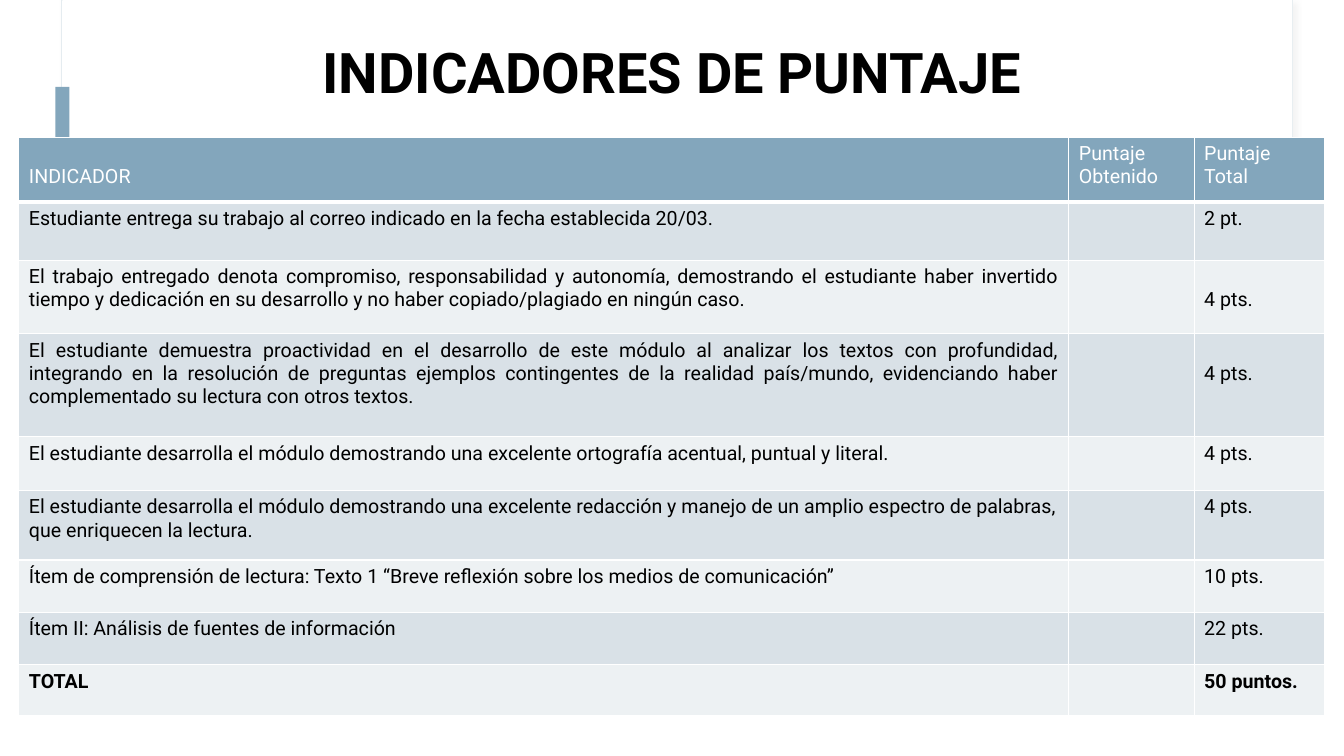
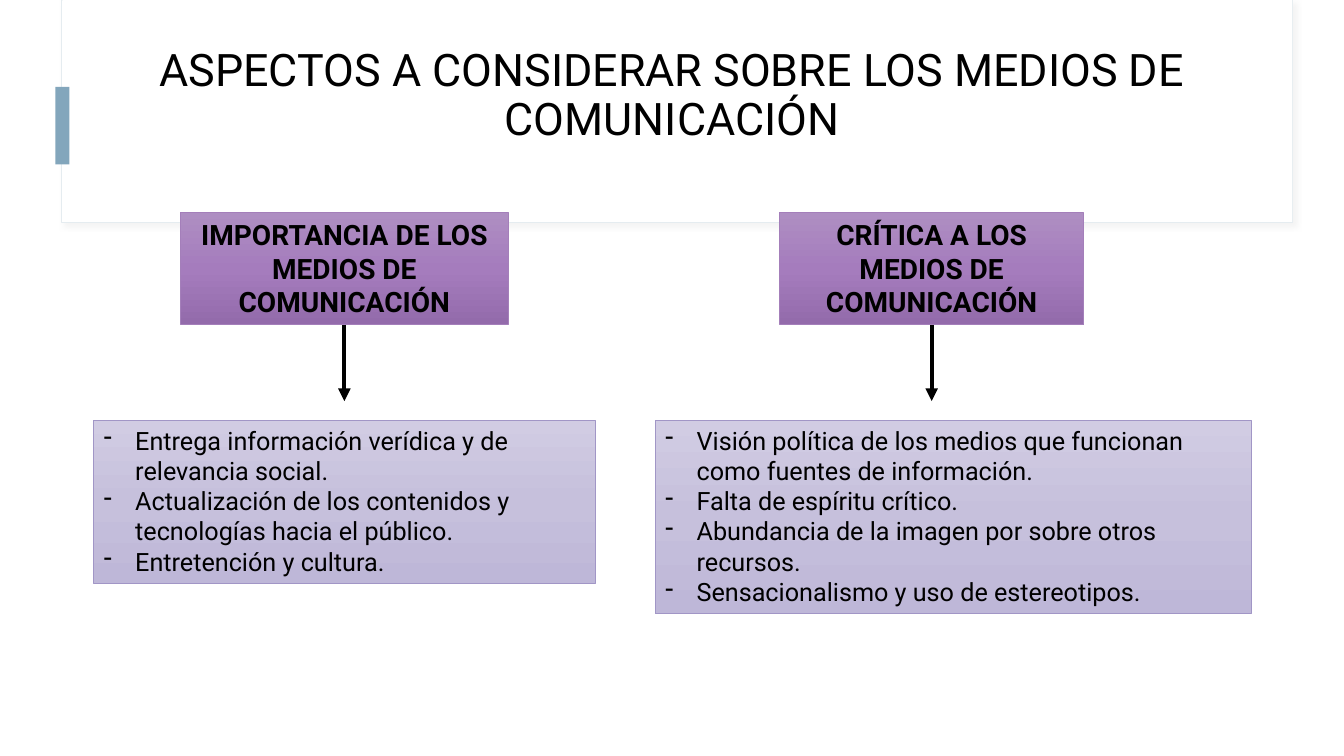
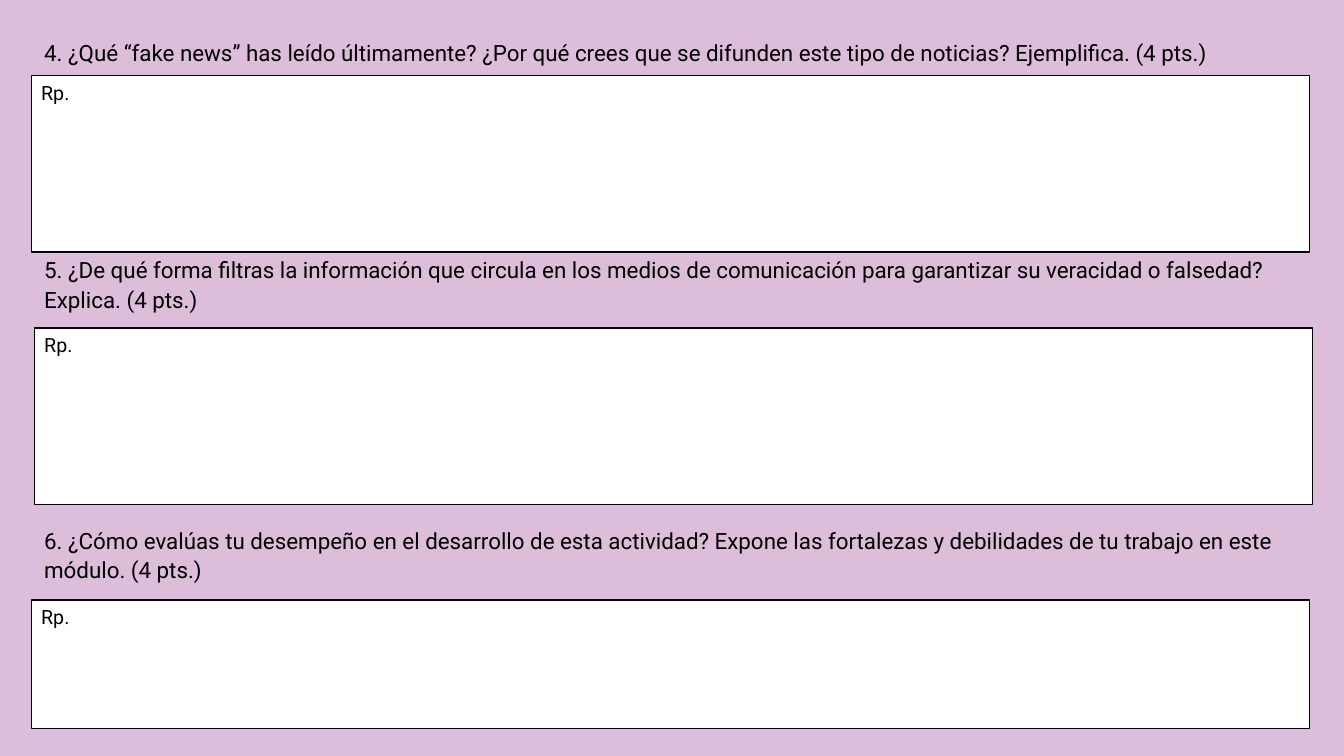
from copy import deepcopy
from dataclasses import dataclass

from lxml import etree
from pptx import Presentation
from pptx.dml.color import RGBColor
from pptx.enum.shapes import MSO_CONNECTOR, MSO_SHAPE
from pptx.enum.text import MSO_ANCHOR, PP_ALIGN
from pptx.oxml.ns import qn
from pptx.util import Pt

RECT = MSO_SHAPE.RECTANGLE
STRAIGHT = MSO_CONNECTOR.STRAIGHT
TOP, MIDDLE, BOTTOM = MSO_ANCHOR.TOP, MSO_ANCHOR.MIDDLE, MSO_ANCHOR.BOTTOM
LEFT, CENTER, JUSTIFY = PP_ALIGN.LEFT, PP_ALIGN.CENTER, PP_ALIGN.JUSTIFY


@dataclass(frozen=True)
class Theme:
    font: str = "Roboto"
    black: str = "000000"
    white: str = "FFFFFF"
    blue: str = "83A6BC"
    pale: str = "E5ECF0"
    shade: str = "D9D9D9"
    bands: tuple = ("D9E1E7", "EDF1F3")
    pink: str = "DCBEDA"
    head: tuple = ("AE8EC2", "A57CBD", "936BAB")
    head_line: str = "A47FBA"
    body: tuple = ("D1CCE3", "C6C0DC", "BEB7D8")
    body_line: str = "A196C6"
    huge: int = 40
    title: int = 32
    label: int = 20
    list: int = 18
    ask: int = 16
    cell: int = 14


T = Theme()

ROWS = [
    ("INDICADOR", "Puntaje Obtenido", "Puntaje Total"),
    ("Estudiante entrega su trabajo al correo indicado en la fecha establecida 20/03.", "", "2 pt."),
    ("El trabajo entregado denota compromiso, responsabilidad y autonomía, demostrando el estudiante "
     "haber invertido tiempo y dedicación en su desarrollo y no haber copiado/plagiado en ningún caso.",
     "", "4 pts."),
    ("El estudiante demuestra proactividad en el desarrollo de este módulo al analizar los textos con "
     "profundidad, integrando en la resolución de preguntas ejemplos contingentes de la realidad "
     "país/mundo, evidenciando haber complementado su lectura con otros textos.", "", "4 pts."),
    ("El estudiante desarrolla el módulo demostrando una excelente ortografía acentual, puntual y literal.",
     "", "4 pts."),
    ("El estudiante desarrolla el módulo demostrando una excelente redacción y manejo de un amplio "
     "espectro de palabras, que enriquecen la lectura.", "", "4 pts."),
    ("Ítem de comprensión de lectura: Texto 1 “Breve reflexión sobre los medios de comunicación”",
     "", "10 pts."),
    ("Ítem II: Análisis de fuentes de información", "", "22 pts."),
    ("TOTAL", "", "50 puntos."),
]
WIDTHS = (750, 89.5, 93)
HEIGHTS = (46.5, 41.5, 52.5, 73.5, 38.5, 49.5, 37.5, 37.5, 36)
LONG_ROWS = (2, 3)

TOPICS = [
    ("IMPORTANCIA DE LOS MEDIOS DE COMUNICACIÓN", (129, 152, 234, 80), (67, 300, 358, 117),
     ["Entrega información verídica y de relevancia social.",
      "Actualización de los contenidos y tecnologías hacia el público.",
      "Entretención y cultura."]),
    ("CRÍTICA A LOS MEDIOS DE COMUNICACIÓN", (557, 152, 217, 80), (468, 300, 425.5, 138.5),
     ["Visión política de los medios que funcionan como fuentes de información.",
      "Falta de espíritu crítico.",
      "Abundancia de la imagen por sobre otros recursos.",
      "Sensacionalismo y uso de estereotipos."]),
]

TASKS = [
    ("4. ¿Qué “fake news” has leído últimamente? ¿Por qué crees que se difunden este tipo de noticias? "
     "Ejemplifica. (4 pts.)", 22.3, 30, (22.3, 54, 913, 126)),
    ("5. ¿De qué forma filtras la información que circula en los medios de comunicación para garantizar "
     "su veracidad o falsedad? Explica. (4 pts.)", 177.6, 50, (24.5, 234.3, 913, 126)),
    ("6. ¿Cómo evalúas tu desempeño en el desarrollo de esta actividad? Expone las fortalezas y "
     "debilidades de tu trabajo en este módulo. (4 pts.)", 370.9, 50, (22.3, 428.6, 913, 92)),
]


def color(code):
    return RGBColor.from_string(code)


def points(box):
    return [Pt(n) for n in box]


def node(parent, tag, **attrs):
    return etree.SubElement(parent, qn(tag), {k: str(v) for k, v in attrs.items()})


def write(frame, lines, size, ink=T.black, bold=False, align=LEFT, space=None, dash=False):
    frame.word_wrap = True
    for i, line in enumerate(lines):
        para = frame.paragraphs[0] if i == 0 else frame.add_paragraph()
        para.text = line
        para.alignment = align
        if space:
            para.line_spacing = space
        if dash:
            props = para._p.get_or_add_pPr()
            props.set("marL", str(Pt(22.5)))
            props.set("indent", str(-Pt(22.5)))
            node(props, "a:buChar", char="-")
        font = para.font
        font.name, font.size, font.bold = T.font, Pt(size), bold
        font.color.rgb = color(ink)


def text(slide, box, line, size, anchor=MIDDLE, **style):
    frame = slide.shapes.add_textbox(*points(box)).text_frame
    frame.vertical_anchor = anchor
    write(frame, [line], size, **style)


def panel(slide, box, fill, line=None, width=0.5):
    shape = slide.shapes.add_shape(RECT, *points(box))
    shape.shadow.inherit = False
    if isinstance(fill, str):
        shape.fill.solid()
        shape.fill.fore_color.rgb = color(fill)
    else:
        blend(shape, fill)
    if line:
        shape.line.color.rgb = color(line)
        shape.line.width = Pt(width)
    else:
        shape.line.fill.background()
    shape.text_frame.vertical_anchor = TOP
    return shape


def blend(shape, codes):
    shape.fill.gradient()
    shape.fill.gradient_angle = 270
    stops = shape.element.spPr.find(".//" + qn("a:gsLst"))
    stops.append(deepcopy(stops[-1]))
    for i, (stop, code) in enumerate(zip(shape.fill.gradient_stops, codes)):
        stop.position = i / 2
        stop.color.rgb = color(code)


def arrow(slide, x, top, end):
    link = slide.shapes.add_connector(STRAIGHT, *points((x, top, x, end)))
    link.line.color.rgb = color(T.black)
    link.line.width = Pt(3)
    props = link.element.spPr
    node(props.find(qn("a:ln")), "a:tailEnd", type="triangle")
    node(props, "a:effectLst")


def frame(slide):
    card = panel(slide, (44, 0, 879, 159), T.white, T.pale, 0.75)
    glow = node(card.element.spPr.find(qn("a:effectLst")), "a:outerShdw",
                blurRad=Pt(4), dist=Pt(3), dir=45 * 60000, algn="tl", rotWithShape=0)
    node(node(glow, "a:srgbClr", val=T.shade), "a:alpha", val=30000)
    panel(slide, (44.5, 0, 878.5, 158.5), T.white)
    panel(slide, (39.5, 62, 10, 55.5), T.blue)


def border(cell, base):
    props = cell._tc.get_or_add_tcPr()
    for i, side in enumerate("LRTB"):
        line = node(props, "a:ln" + side, w=Pt(base if side == "B" else 1))
        node(node(line, "a:solidFill"), "a:srgbClr", val=T.white)
        props.insert(i, line)


def scores(slide):
    box = points((13.5, 98, sum(WIDTHS), sum(HEIGHTS)))
    table = slide.shapes.add_table(len(ROWS), len(WIDTHS), *box).table
    table.horz_banding = False
    for col, width in zip(table.columns, WIDTHS):
        col.width = Pt(width)
    for r, (row, height) in enumerate(zip(ROWS, HEIGHTS)):
        table.rows[r].height = Pt(height)
        for c, line in enumerate(row):
            cell = table.cell(r, c)
            cell.fill.solid()
            cell.fill.fore_color.rgb = color(T.bands[(r - 1) % 2] if r else T.blue)
            border(cell, 1 if r else 3)
            if r == 0 and c == 0:
                cell.vertical_anchor = BOTTOM
                cell.margin_bottom = Pt(10)
            if r in LONG_ROWS and c == 2:
                cell.margin_top = Pt(20)
            write(cell.text_frame, [line], T.cell, T.black if r else T.white,
                  bold=r == len(ROWS) - 1,
                  align=JUSTIFY if r in LONG_ROWS and c == 0 else LEFT)


def topic(slide, label, head, body, lines):
    top = panel(slide, head, T.head, T.head_line)
    write(top.text_frame, [label], T.label, bold=True, align=CENTER)
    base = panel(slide, body, T.body, T.body_line)
    write(base.text_frame, lines, T.list, dash=True)
    x, y, width, height = head
    arrow(slide, x + width / 2, y + height, 286.5)


def task(slide, line, top, height, box):
    text(slide, (24.5, top, 906.5, height), line, T.ask, TOP, space=1.1)
    write(panel(slide, box, T.white, T.black, 1).text_frame, ["Rp."], T.cell)


def main():
    deck = Presentation()
    deck.slide_width, deck.slide_height = Pt(960), Pt(540)
    first, second, third = (deck.slides.add_slide(deck.slide_layouts[6]) for _ in range(3))

    frame(first)
    text(first, (66, 28, 828, 52), "INDICADORES DE PUNTAJE", T.huge,
         bold=True, align=CENTER, space=0.9)
    scores(first)

    frame(second)
    for item in TOPICS:
        topic(second, *item)
    text(second, (80, 22.5, 800.5, 93), "ASPECTOS A CONSIDERAR SOBRE LOS MEDIOS DE COMUNICACIÓN",
         T.title, align=CENTER, space=0.9)

    third.background.fill.solid()
    third.background.fill.fore_color.rgb = color(T.pink)
    for item in TASKS:
        task(third, *item)

    deck.save("out.pptx")


if __name__ == "__main__":
    main()
